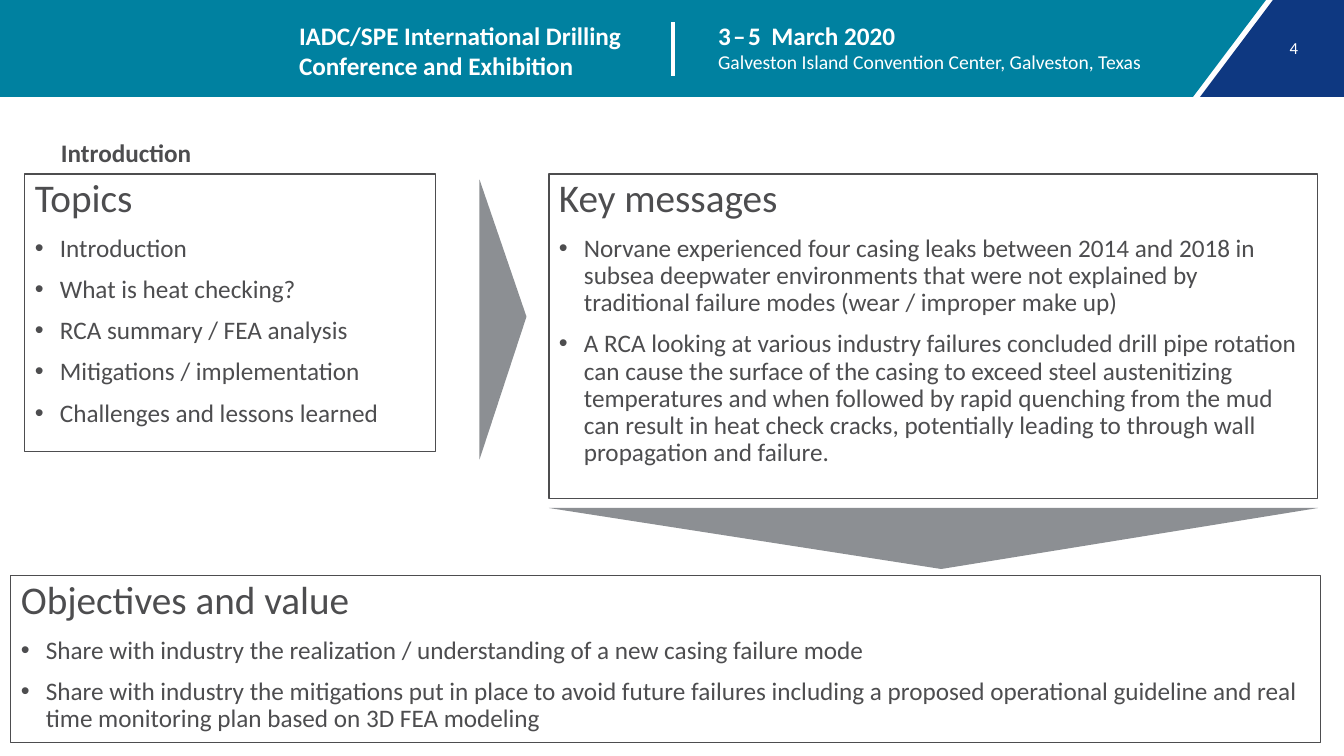
from lxml import etree
from pptx import Presentation
from pptx import util as u
from pptx.dml.color import RGBColor
from pptx.enum import shapes, text
from pptx.oxml import ns

PX = 9071
WHITE, INK, GREY, TEAL, NAVY = "FFFFFF", "4D4D4F", "8C8F93", "0081A0", "0E3881"


def paint(color_format, color):
    color_format.rgb = RGBColor.from_string(color)


def write(frame, content, size=18, color=INK, bold=False, bullet=False,
          before=0, leading=None, tracking=0, same_line=False):
    paragraph = frame.paragraphs[-1]
    if paragraph.runs and not same_line:
        paragraph = frame.add_paragraph()
    if not same_line:
        paragraph.alignment = text.PP_ALIGN.LEFT
        properties = paragraph._p.get_or_add_pPr()
        if bullet:
            properties.set("marL", str(25 * PX))
            properties.set("indent", str(-25 * PX))
            etree.SubElement(properties, ns.qn("a:buFont")).set("typeface", "Arial")
            etree.SubElement(properties, ns.qn("a:buChar")).set("char", "•")
        paragraph.space_before = u.Pt(before)
        if leading:
            paragraph.line_spacing = leading
    run = paragraph.add_run()
    run.text = content
    run.font.name, run.font.size, run.font.bold = "Calibri", u.Pt(size), bold
    paint(run.font.color, color)
    if tracking:
        run._r.get_or_add_rPr().set("spc", str(tracking))


deck = Presentation()
deck.slide_width, deck.slide_height = 1344 * PX, 756 * PX
slide = deck.slides.add_slide(deck.slide_layouts[6])

for corners, color in [
    ([(0, 0), (1266, 0), (1193, 97), (0, 97)], TEAL),
    ([(1273, 0), (1344, 0), (1344, 97), (1200, 97)], NAVY),
]:
    outline = slide.shapes.build_freeform(*corners[0], scale=PX)
    outline.add_line_segments(corners[1:], close=True)
    band = outline.convert_to_shape()
    band.shadow.inherit = False
    band.fill.solid()
    paint(band.fill.fore_color, color)
    band.line.fill.background()

header_frames = []
for left, top, width, height in [(1284, 38, 20, 20), (718, 20, 579, 54), (299, 20, 337, 61)]:
    frame = slide.shapes.add_textbox(left * PX, top * PX, width * PX, height * PX).text_frame
    frame.margin_left = frame.margin_right = frame.margin_top = frame.margin_bottom = 0
    frame.word_wrap = True
    header_frames.append(frame)
page_number, venue, event = header_frames

page_number.word_wrap = False
page_number.vertical_anchor = text.MSO_ANCHOR.BOTTOM
write(page_number, "4", size=12, color=WHITE)
page_number.paragraphs[0].alignment = text.PP_ALIGN.CENTER
write(venue, "3–5 ", color=WHITE, bold=True, tracking=170)
write(venue, "March 2020", color=WHITE, bold=True, same_line=True)
write(venue, "Galveston Island Convention Center, Galveston, Texas", size=14, color=WHITE)
write(event, "IADC/SPE International Drilling Conference and Exhibition", color=WHITE, bold=True)

divider = slide.shapes.add_connector(
    shapes.MSO_CONNECTOR.STRAIGHT, 673 * PX, 22 * PX, 673 * PX, 76 * PX)
divider.line.width = u.Pt(3)
paint(divider.line.color, WHITE)
etree.SubElement(divider._element.spPr, ns.qn("a:effectLst"))

title = slide.shapes.add_textbox(51 * PX, 132 * PX, 1253 * PX, 55 * PX).text_frame
title.word_wrap = True
write(title, "Introduction", bold=True)

panels = [
    ((25, 174, 411, 278), "Topics", [
        "Introduction",
        "What is heat checking?",
        "RCA summary / FEA analysis",
        "Mitigations / implementation",
        "Challenges and lessons learned",
    ]),
    ((549, 174, 769, 325), "Key messages", [
        "Norvane experienced four casing leaks between 2014 and 2018 in subsea deepwater "
        "environments that were not explained by traditional failure modes "
        "(wear / improper make up)",
        "A RCA looking at various industry failures concluded drill pipe rotation can cause "
        "the surface of the casing to exceed steel austenitizing temperatures and when "
        "followed by rapid quenching from the mud can result in heat check cracks, "
        "potentially leading to through wall propagation and failure.",
    ]),
    ((11, 576, 1310, 167), "Objectives and value", [
        "Share with industry the realization / understanding of a new casing failure mode",
        "Share with industry the mitigations put in place to avoid future failures including "
        "a proposed operational guideline and real time monitoring plan based on 3D FEA modeling",
    ]),
]
for place, heading, points in panels:
    panel = slide.shapes.add_shape(shapes.MSO_SHAPE.RECTANGLE, *[n * PX for n in place])
    panel.shadow.inherit = False
    panel.fill.background()
    panel.line.width = u.Pt(0.75)
    paint(panel.line.color, INK)
    frame = panel.text_frame
    frame.word_wrap = True
    frame.vertical_anchor = text.MSO_ANCHOR.TOP
    write(frame, heading, size=28, leading=0.9)
    for point in points:
        write(frame, point, bullet=True, before=10, leading=0.9)

for place, turn in [((363, 296, 280, 47), 90), ((549, 508, 769, 61), 180)]:
    pointer = slide.shapes.add_shape(
        shapes.MSO_SHAPE.ISOSCELES_TRIANGLE, *[n * PX for n in place])
    pointer.adjustments[0] = 0.49
    pointer.rotation = turn
    pointer.shadow.inherit = False
    pointer.fill.solid()
    paint(pointer.fill.fore_color, GREY)
    pointer.line.fill.background()

deck.save("out.pptx")
